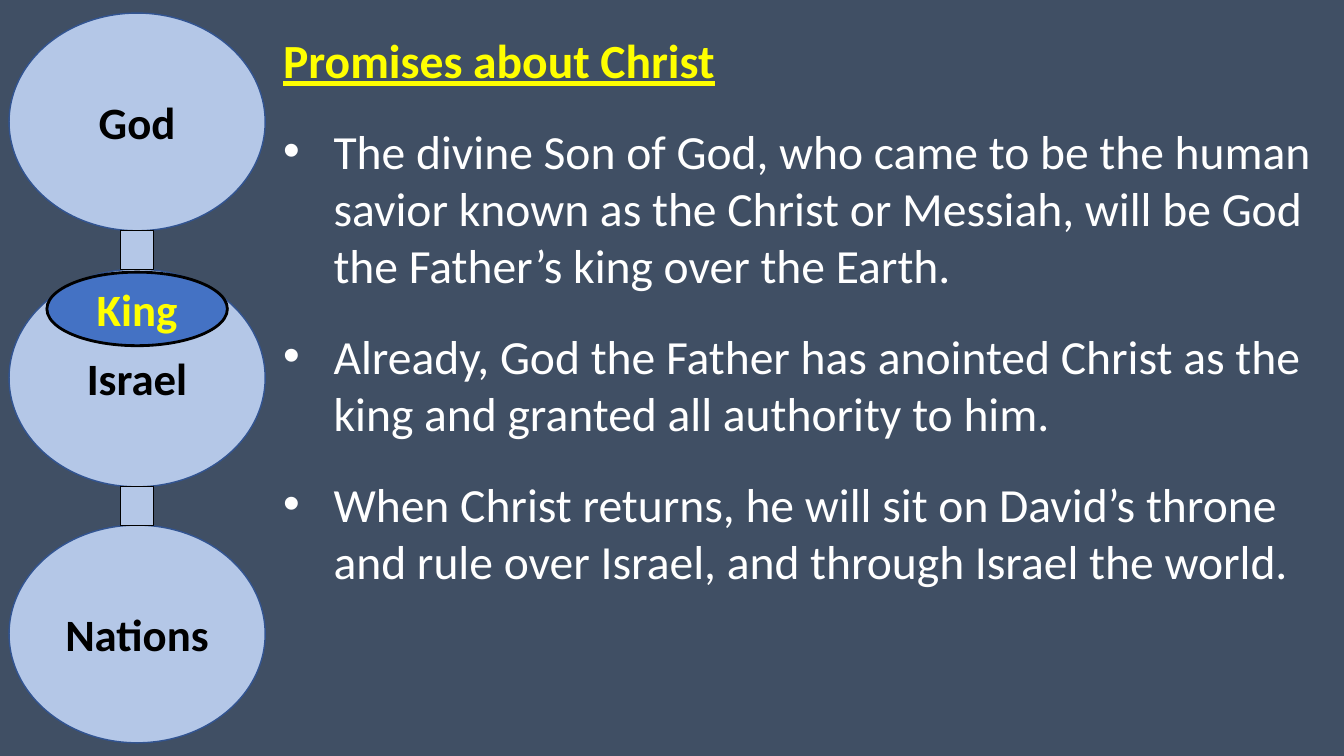
from dataclasses import dataclass

from lxml import etree
from pptx import Presentation
from pptx.dml.color import RGBColor
from pptx.enum.shapes import MSO_SHAPE
from pptx.enum.text import MSO_ANCHOR, PP_ALIGN
from pptx.oxml.ns import qn
from pptx.util import Inches, Pt

OVAL = MSO_SHAPE.OVAL
RECTANGLE = MSO_SHAPE.RECTANGLE
MIDDLE = MSO_ANCHOR.MIDDLE
CENTER = PP_ALIGN.CENTER


@dataclass(frozen=True)
class Theme:
    font: str = "Calibri"
    background: RGBColor = RGBColor.from_string("404F64")
    pale: RGBColor = RGBColor.from_string("B4C7E7")
    accent: RGBColor = RGBColor.from_string("4472C4")
    outline: RGBColor = RGBColor.from_string("325491")
    black: RGBColor = RGBColor.from_string("000000")
    white: RGBColor = RGBColor.from_string("FFFFFF")
    yellow: RGBColor = RGBColor.from_string("FFFF00")
    body_size: int = 34
    label_size: int = 32
    paragraph_gap: int = 24


THEME = Theme()
TITLE = "Promises about Christ"
PROMISES = [
    "The divine Son of God, who came to be the human savior known as the Christ or Messiah, "
    "will be God the Father’s king over the Earth.",
    "Already, God the Father has anointed Christ as the king and granted all authority to him.",
    "When Christ returns, he will sit on David’s throne and rule over Israel, "
    "and through Israel the world.",
]
CHAIN = ["God", "Israel", "Nations"]


def style_font(paragraph, size, color, bold):
    font = paragraph.font
    font.name = THEME.font
    font.size = Pt(size)
    font.bold = bold
    font.color.rgb = color


def add_bullet(paragraph, indent):
    properties = paragraph._p.get_or_add_pPr()
    properties.set("marL", str(indent))
    properties.set("indent", str(-indent))
    etree.SubElement(properties, qn("a:buFont"), typeface="Arial")
    etree.SubElement(properties, qn("a:buChar"), char="•")


def add_figure(slide, kind, box, fill, line, line_width, label="", label_color=THEME.black):
    shape = slide.shapes.add_shape(kind, *(Inches(length) for length in box))
    shape.shadow.inherit = False
    shape.fill.solid()
    shape.fill.fore_color.rgb = fill
    shape.line.color.rgb = line
    shape.line.width = Pt(line_width)
    if label:
        shape.text_frame.vertical_anchor = MIDDLE
        paragraph = shape.text_frame.paragraphs[0]
        paragraph.text = label
        paragraph.alignment = CENTER
        style_font(paragraph, THEME.label_size, label_color, True)


def add_promises(slide, left, top, width, height):
    text_box = slide.shapes.add_textbox(Inches(left), Inches(top), Inches(width), Inches(height))
    frame = text_box.text_frame
    frame.word_wrap = True
    frame.margin_top = Inches(0.29)
    heading = frame.paragraphs[0]
    heading.text = TITLE
    style_font(heading, THEME.body_size, THEME.yellow, True)
    heading.font.underline = True
    for promise in PROMISES:
        paragraph = frame.add_paragraph()
        paragraph.text = promise
        add_bullet(paragraph, Inches(0.5))
        paragraph.space_before = Pt(THEME.paragraph_gap)
        style_font(paragraph, THEME.body_size, THEME.white, False)


def add_chain(slide, left, top, width, height):
    gap, link_width = 0.38, 0.33
    oval_height = (height - gap * (len(CHAIN) - 1)) / len(CHAIN)
    step = oval_height + gap
    for index, name in enumerate(CHAIN):
        box = (left, top + index * step, width, oval_height)
        add_figure(slide, OVAL, box, THEME.pale, THEME.outline, 1, name)
    for index in range(len(CHAIN) - 1):
        box = (left + (width - link_width) / 2, top + index * step + oval_height, link_width, gap)
        add_figure(slide, RECTANGLE, box, THEME.pale, THEME.black, 0.75)
    king_width = 1.79
    king_box = (left + (width - king_width) / 2, top + step + 0.03, king_width, 0.73)
    add_figure(slide, OVAL, king_box, THEME.accent, THEME.black, 2, "King", THEME.yellow)


def main():
    presentation = Presentation()
    presentation.slide_width = Inches(13.33)
    presentation.slide_height = Inches(7.5)
    slide = presentation.slides.add_slide(presentation.slide_layouts[6])
    slide.background.fill.solid()
    slide.background.fill.fore_color.rgb = THEME.background
    add_promises(slide, 2.71, 0.02, 10.62, 5.92)
    add_chain(slide, 0.09, 0.13, 2.54, 7.24)
    presentation.save("out.pptx")


if __name__ == "__main__":
    main()
